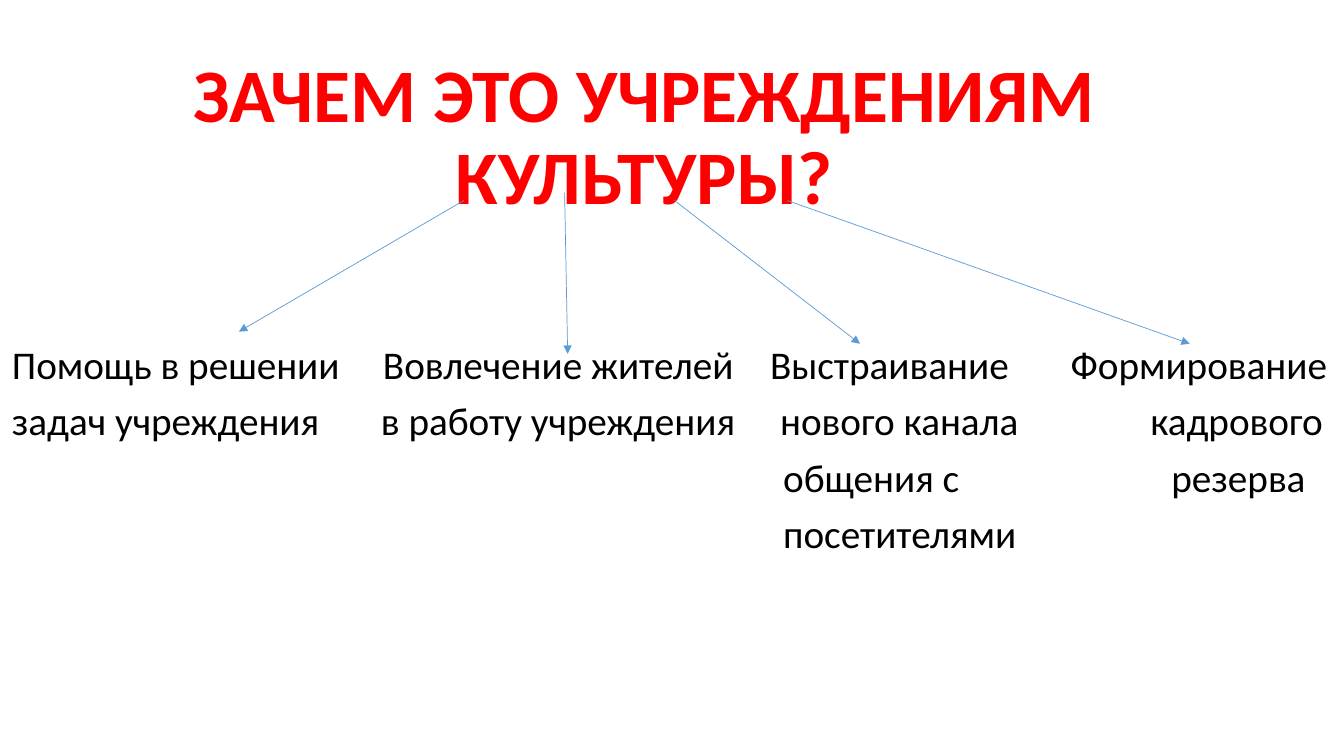
from lxml.etree import SubElement
from pptx import Presentation
from pptx.dml.color import RGBColor
from pptx.enum.shapes import MSO_CONNECTOR
from pptx.enum.text import MSO_ANCHOR, PP_ALIGN
from pptx.oxml.ns import qn
from pptx.util import Inches, Pt

RED, BLACK, BLUE = "FF0000", "000000", "5B9BD5"


def rgb(value):
    return RGBColor.from_string(value)


def add_text(p, text, size=28, color=BLACK, bold=False, align=PP_ALIGN.LEFT,
             before=0, font="Calibri"):
    p.alignment, p.line_spacing, p.space_before = align, 0.9, Pt(before)
    r = p.add_run()
    r.text = text
    r.font.name, r.font.size, r.font.bold = font, Pt(size), bold
    r.font.color.rgb = rgb(color)


class Deck:
    """Lengths are percentages of the slide's width (x) and height (y)."""

    def __init__(self):
        self.prs = Presentation()
        self.prs.slide_width, self.prs.slide_height = Inches(13.33), Inches(7.5)
        self.s = self.prs.slides.add_slide(self.prs.slide_layouts[6])

    def x(self, share):
        return round(self.prs.slide_width * share / 100)

    def y(self, share):
        return round(self.prs.slide_height * share / 100)

    def box(self, left, top, width, height, anchor=MSO_ANCHOR.TOP):
        sp = self.s.shapes.add_textbox(self.x(left), self.y(top),
                                       self.x(width), self.y(height))
        tf = sp.text_frame
        tf.word_wrap, tf.vertical_anchor = True, anchor
        return tf

    def title(self, text, *area):
        tf = self.box(*area, anchor=MSO_ANCHOR.BOTTOM)
        add_text(tf.paragraphs[0], text, size=54, color=RED, bold=True,
                 align=PP_ALIGN.CENTER)

    def tabbed_lines(self, lines, *area):
        """Each line is a list of (tab stop, words); stop 0 is the left edge."""
        tf = self.box(*area)
        for i, line in enumerate(lines):
            p = tf.add_paragraph() if i else tf.paragraphs[0]
            add_text(p, "".join("\t" * (stop > 0) + words for stop, words in line),
                     before=10)
            tabs = SubElement(p._p.get_or_add_pPr(), qn("a:tabLst"))
            for stop, _ in line:
                if stop:
                    SubElement(tabs, qn("a:tab"), pos=str(self.x(stop)), algn="l")

    def arrow(self, x1, y1, x2, y2):
        c = self.s.shapes.add_connector(MSO_CONNECTOR.STRAIGHT, self.x(x1),
                                        self.y(y1), self.x(x2), self.y(y2))
        c.line.color.rgb, c.line.width = rgb(BLUE), Pt(0.5)
        SubElement(c.line._get_or_add_ln(), qn("a:tailEnd"), type="triangle")
        SubElement(c._element.spPr, qn("a:effectLst"))


def main():
    deck = Deck()

    # Question
    deck.title("ЗАЧЕМ ЭТО УЧРЕЖДЕНИЯМ КУЛЬТУРЫ?", 4.8, 5.33, 86.27, 24.53)

    # Four answers side by side
    deck.tabbed_lines([
        [(0, "Помощь в решении"), (27.61, "Вовлечение жителей"),
         (56.41, "Выстраивание"), (78.77, "Формирование")],
        [(0, "задач учреждения"), (27.46, "в работу учреждения"),
         (57.16, "нового канала"), (84.7, "кадрового")],
        [(57.39, "общения с"), (86.27, "резерва")],
        [(57.39, "посетителями")],
    ], 0.15, 45.07, 100, 43.33)

    # Arrows from the question to each answer
    for ends in [(34.51, 26.53, 17.78, 43.87), (42.01, 25.47, 42.24, 46.8),
                 (50.19, 26.53, 63.99, 45.47), (58.59, 26.53, 88.52, 45.47)]:
        deck.arrow(*ends)

    deck.prs.save("out.pptx")


if __name__ == "__main__":
    main()
